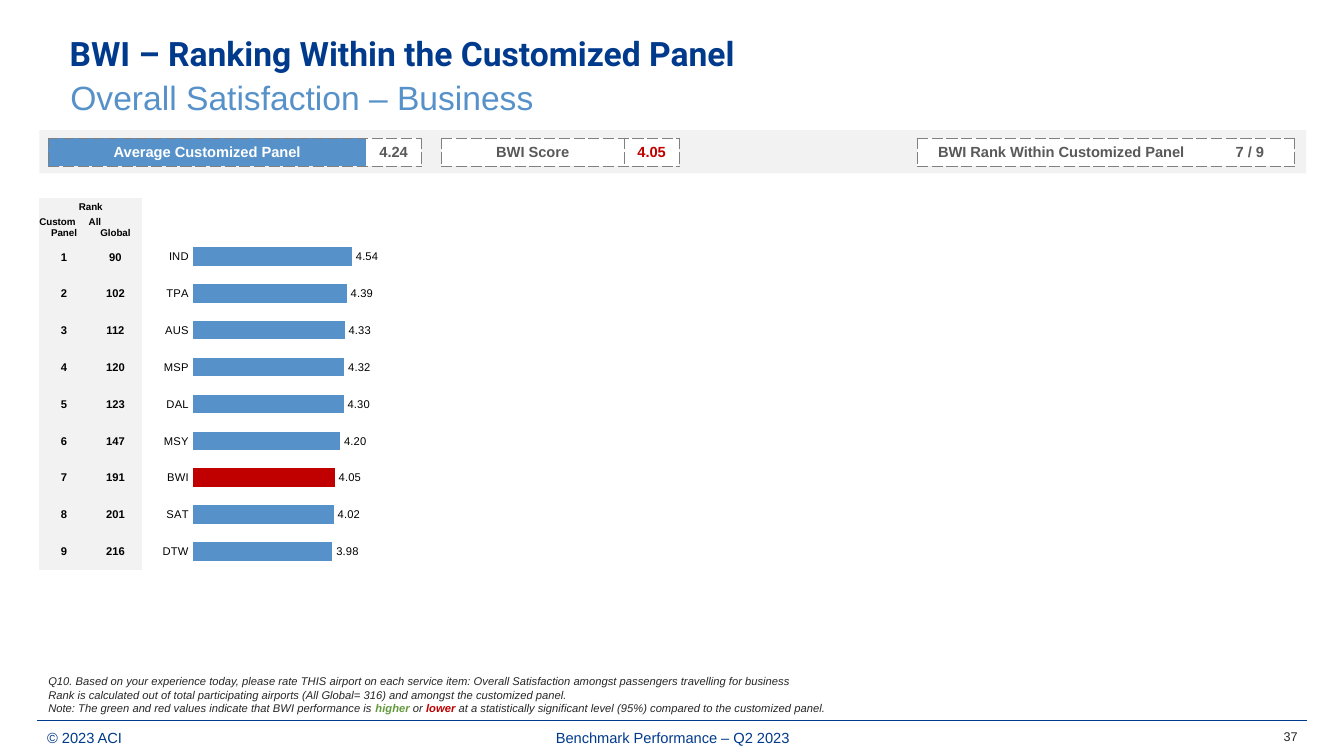
from dataclasses import dataclass
from typing import Any

import lxml.etree
import pptx
import pptx.chart.data
import pptx.dml.color
import pptx.enum.chart
import pptx.enum.shapes
import pptx.enum.text
import pptx.oxml
import pptx.oxml.ns
import pptx.util

Pt = pptx.util.Pt
qn = pptx.oxml.ns.qn
ALIGN = pptx.enum.text.PP_ALIGN
ANCHOR = pptx.enum.text.MSO_ANCHOR

NAVY, BLUE, RED, GREEN = "003A8C", "5692C9", "C00000", "649B3F"
PALE, WHITE, BLACK = "F2F2F2", "FFFFFF", "000000"
DARK, GREY, MID = "262626", "595959", "808080"
NO_GRID = "{2D5ABB26-0587-4C30-8999-92F81FD0307C}"

AIRPORTS = [("IND", 4.54, 90), ("TPA", 4.39, 102), ("AUS", 4.33, 112),
            ("MSP", 4.32, 120), ("DAL", 4.30, 123), ("MSY", 4.20, 147),
            ("BWI", 4.05, 191), ("SAT", 4.02, 201), ("DTW", 3.98, 216)]
SPARE_ROWS = 2


@dataclass
class Box:
    x: float
    y: float
    w: float
    h: float

    def lengths(self) -> list[int]:
        return [Pt(v) for v in (self.x, self.y, self.w, self.h)]


@dataclass
class Run:
    text: str
    size: float
    color: str
    bold: bool = False
    italic: bool = False
    font: str = "Arial"


@dataclass
class Cell:
    lines: tuple[Run, ...] = ()
    fill: str = ""
    borders: str = ""
    aligns: tuple[Any, ...] = (ALIGN.CENTER,)
    anchor: Any = ANCHOR.MIDDLE


def rgb(color: str) -> pptx.dml.color.RGBColor:
    return pptx.dml.color.RGBColor.from_string(color)


def set_font(font: Any, run: Run) -> None:
    fmt = {"name": run.font, "size": Pt(run.size), "bold": run.bold, "italic": run.italic}
    for name, value in fmt.items():
        setattr(font, name, value)
    font.color.rgb = rgb(run.color)


def fill_text(tf: Any, paras: list[list[Run]], anchor: Any, align: Any = ALIGN.LEFT) -> None:
    fmt = {"word_wrap": True, "vertical_anchor": anchor,
           "auto_size": pptx.enum.text.MSO_AUTO_SIZE.NONE}
    for name, value in fmt.items():
        setattr(tf, name, value)
    for i, runs in enumerate(paras):
        p = tf.paragraphs[0] if i == 0 else tf.add_paragraph()
        p.alignment = align
        for run in runs:
            r = p.add_run()
            r.text = run.text
            set_font(r.font, run)


def add_text(s: Any, box: Box, paras: list[list[Run]], anchor: Any = ANCHOR.MIDDLE,
             align: Any = ALIGN.LEFT) -> None:
    fill_text(s.shapes.add_textbox(*box.lengths()).text_frame, paras, anchor, align)


def draw_cell(tc: Any, cell: Cell) -> None:
    for side in ("left", "right", "top", "bottom"):
        setattr(tc, f"margin_{side}", 0)
    tc.vertical_anchor = cell.anchor
    tcPr = tc._tc.get_or_add_tcPr()
    for side in cell.borders:
        ln = lxml.etree.SubElement(tcPr, qn(f"a:ln{side}"), w=str(Pt(0.5)))
        fill = lxml.etree.SubElement(ln, qn("a:solidFill"))
        lxml.etree.SubElement(fill, qn("a:srgbClr"), val=MID)
        lxml.etree.SubElement(ln, qn("a:prstDash"), val="dash")
    if cell.fill:
        tc.fill.solid()
        tc.fill.fore_color.rgb = rgb(cell.fill)
    else:
        tc.fill.background()
    tf = tc.text_frame
    for i, run in enumerate(cell.lines):
        p = tf.paragraphs[0] if i == 0 else tf.add_paragraph()
        p.alignment = cell.aligns[min(i, len(cell.aligns) - 1)]
        r = p.add_run()
        r.text = run.text
        set_font(r.font, run)
    if not cell.lines:
        lxml.etree.SubElement(tf.paragraphs[0]._p, qn("a:endParaRPr"), sz="700")


def add_table(s: Any, x: float, y: float, cols: list[float], heights: list[float],
              grid: list[list[Cell]]) -> Any:
    box = Box(x, y, sum(cols), sum(heights))
    tbl = s.shapes.add_table(len(heights), len(cols), *box.lengths()).table
    tbl.first_row = tbl.horz_banding = False
    tbl._tbl.tblPr.find(qn("a:tableStyleId")).text = NO_GRID
    for col, w in zip(tbl.columns, cols):
        col.width = Pt(w)
    for row, h, cells in zip(tbl.rows, heights, grid):
        row.height = Pt(h)
        for tc, cell in zip(row.cells, cells):
            draw_cell(tc, cell)
    return tbl


def add_rank_table(s: Any) -> None:
    def label(text: str, size: float) -> Run:
        return Run(text, size, BLACK, bold=True)

    def header(*words: str) -> Cell:
        return Cell(tuple(label(w, 7) for w in words), PALE,
                    aligns=(ALIGN.LEFT, ALIGN.CENTER), anchor=ANCHOR.TOP)

    blank = [Cell(fill=WHITE), Cell(fill=WHITE), Cell()]
    grid = [[Cell((label("Rank", 7),), PALE), Cell(fill=PALE), Cell()],
            [header("Custom", "Panel"), header("All", "Global"), Cell()]]
    for rank, (_, _, overall) in enumerate(AIRPORTS, 1):
        grid.append([Cell((label(str(v), 8),), PALE) for v in (rank, overall)] + [Cell()])
    grid += [blank] * SPARE_ROWS
    heights = [13.7, 15.8] + [26.28] * (len(grid) - 2)
    tbl = add_table(s, 28.1, 141.1, [35.3, 38.2, 228.2] * 3, heights,
                    [row + blank * 2 for row in grid])
    for col in (0, 3, 6):
        tbl.cell(0, col).merge(tbl.cell(0, col + 1))


def add_scores(s: Any) -> None:
    def name(text: str, color: str = GREY, fill: str = WHITE) -> Cell:
        return Cell((Run(text, 10.5, color, bold=True),), fill, "LTB")

    def value(text: str, color: str = GREY) -> Cell:
        return Cell((Run(text, 10.5, color, bold=True),), WHITE, "RTB")

    add_table(s, 655.2, 98.6, [205.9, 63.4], [20.2],
              [[name("BWI Rank Within Customized Panel"), value("7 / 9")]])
    add_table(s, 34.6, 98.6, [226.8, 39.6, 14.4, 130.3, 39.6], [20.2],
              [[name("Average Customized Panel", WHITE, BLUE), value("4.24"),
                Cell(borders="LR"), name("BWI Score"), value("4.05", RED)]])


def add_score_chart(s: Any) -> None:
    data = pptx.chart.data.CategoryChartData()
    data.categories = [a[0] for a in AIRPORTS] + [""] * SPARE_ROWS
    data.add_series("Series 1", [a[1] for a in AIRPORTS] + [None] * SPARE_ROWS)
    kind = pptx.enum.chart.XL_CHART_TYPE.BAR_CLUSTERED
    chart = s.shapes.add_chart(kind, *Box(104.4, 160.6, 178.6, 305.3).lengths(), data).chart
    chart.has_legend = chart.has_title = False
    set_font(chart.font, Run("", 7, BLACK))
    axis = chart.category_axis
    axis.reverse_order = True
    axis.major_tick_mark = axis.minor_tick_mark = pptx.enum.chart.XL_TICK_MARK.NONE
    axis.format.line.fill.background()
    set_font(axis.tick_labels.font, Run("", 8, BLACK))
    scale = {"minimum_scale": 0, "maximum_scale": 5,
             "has_major_gridlines": False, "visible": False}
    for attr, setting in scale.items():
        setattr(chart.value_axis, attr, setting)
    plot = chart.plots[0]
    plot.gap_width, plot.vary_by_categories = 100, False
    bars = plot.series[0]
    bwi = bars.points[[a[0] for a in AIRPORTS].index("BWI")]
    for part, color in ((bars, BLUE), (bwi, RED)):
        part.format.fill.solid()
        part.format.fill.fore_color.rgb = rgb(color)
    labels = bars.data_labels
    fmt = {"show_value": True, "number_format": "#,##0.00", "number_format_is_linked": False,
           "position": pptx.enum.chart.XL_LABEL_POSITION.OUTSIDE_END}
    for attr, setting in fmt.items():
        setattr(labels, attr, setting)
    set_font(labels.font, Run("", 8, BLACK))
    area = chart._chartSpace.find(".//" + qn("c:plotArea"))
    for old in area.findall(qn("c:layout")):
        area.remove(old)
    layout = lxml.etree.Element(qn("c:layout"))
    manual = lxml.etree.SubElement(layout, qn("c:manualLayout"))
    for tag, val in (("layoutTarget", "inner"), ("xMode", "edge"), ("yMode", "edge"),
                     ("x", "0.187"), ("y", "0.031"), ("w", "0.701"), ("h", "0.949")):
        lxml.etree.SubElement(manual, qn(f"c:{tag}"), val=val)
    area.insert(0, layout)


def add_footer(s: Any) -> None:
    for box, text, align in (
            (Box(310.3, 515.5, 340.6, 22.3), "Benchmark Performance – Q2 2023", ALIGN.CENTER),
            (Box(26.6, 515.5, 303.1, 22.3), "© 2023 ACI", ALIGN.LEFT)):
        add_text(s, box, [[Run(text, 10.5, NAVY)]], align=align)
    add_text(s, Box(877.7, 514.8, 56.2, 22.3), [[Run("37", 9, DARK)]], align=ALIGN.RIGHT)
    straight = pptx.enum.shapes.MSO_CONNECTOR.STRAIGHT
    rule = s.shapes.add_connector(straight, Pt(26.6), Pt(514.8), Pt(933.8), Pt(514.8))
    rule.line.color.rgb, rule.line.width = rgb(NAVY), Pt(1)
    lxml.etree.SubElement(rule._element.spPr, qn("a:effectLst"))


def add_notes_text(s: Any) -> None:
    def note(text: str, color: str = DARK) -> Run:
        return Run(text, 8, color, bold=color != DARK, italic=True)

    add_text(s, Box(27.4, 484.6, 907.2, 29.5), [
        [note("Q10. Based on your experience today, please rate THIS airport on each service item: "
              "Overall Satisfaction amongst passengers travelling for business")],
        [note("Rank is calculated out of total participating airports (All Global= 316) "
              "and amongst the customized panel.")],
        [note("Note: The green and red values indicate that BWI performance is "),
         note("higher", GREEN), note(" or "), note("lower", RED),
         note(" at a statistically significant level (95%) compared to the customized panel.")],
    ], ANCHOR.BOTTOM)


def main() -> None:
    prs = pptx.Presentation()
    prs.slide_width, prs.slide_height = Pt(960), Pt(540)
    s = prs.slides.add_slide(prs.slide_layouts[5])
    title = s.shapes.title
    title.left, title.top, title.width, title.height = Box(42.5, 13, 765.4, 50.4).lengths()
    heading = Run("BWI – Ranking Within the Customized Panel", 24, NAVY, bold=True, font="Roboto")
    fill_text(title.text_frame, [[heading]], ANCHOR.MIDDLE)
    add_rank_table(s)
    add_text(s, Box(43.2, 51.1, 765.4, 36),
             [[Run("Overall Satisfaction – Business", 24, BLUE)]], ANCHOR.TOP)
    add_notes_text(s)
    band = s.shapes.add_shape(pptx.enum.shapes.MSO_SHAPE.RECTANGLE,
                              *Box(28.1, 92.9, 905, 31).lengths())
    band.shadow.inherit = False
    band.fill.solid()
    band.fill.fore_color.rgb = rgb(PALE)
    band.line.fill.background()
    add_scores(s)
    add_score_chart(s)
    add_footer(s)
    prs.save("out.pptx")


if __name__ == "__main__":
    main()
